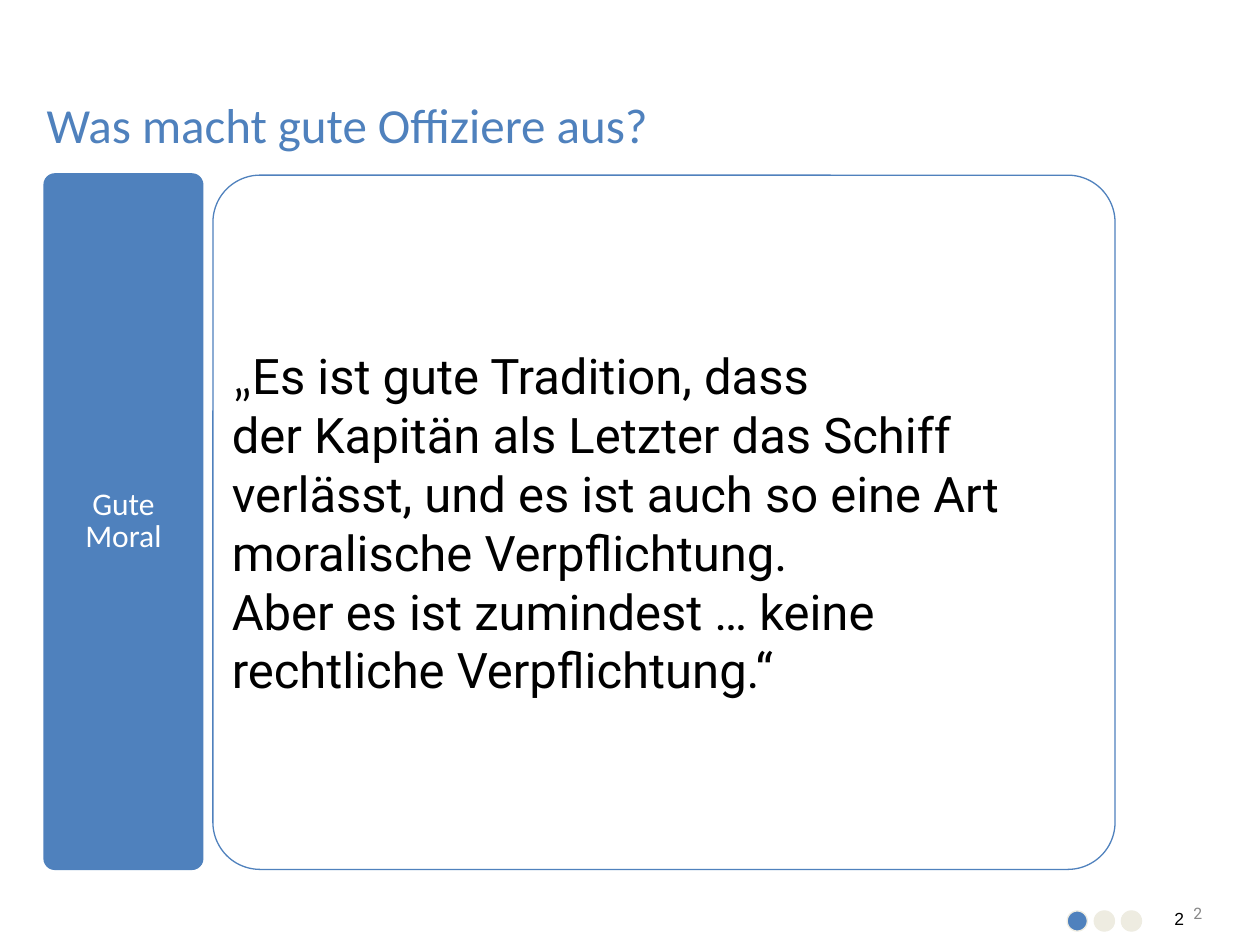
from pptx import Presentation
from pptx.util import Inches, Pt
from pptx.dml.color import RGBColor
from pptx.enum.shapes import MSO_SHAPE as SHAPE
from pptx.enum.text import PP_ALIGN as ALIGN, MSO_ANCHOR as ANCHOR

W, H = 10, 7.5
COLORS = {"blue": "4F81BD", "sand": "EEECE1", "white": "FFFFFF",
          "black": "000000", "grey": "878787"}
TITLE = {"name": "Calibri", "size": Pt(28)}
LABEL = {"name": "Calibri", "size": Pt(18)}
QUOTE = {"name": "Roboto", "size": Pt(28)}
LAYOUT_NUMBER = {"name": "Roboto", "size": Pt(9)}
NUMBER = {"name": "Arial", "size": Pt(10)}
QUOTE_TEXT = [
    [("„", TITLE), ("Es ist gute Tradition, dass", QUOTE)],
    [("der Kapitän als Letzter das Schiff verlässt, und es ist auch so eine Art "
      "moralische Verpflichtung.", QUOTE)],
    [("Aber es ist zumindest … keine rechtliche Verpflichtung.“", QUOTE)],
]


def rgb(name):
    """Return the named colour."""
    return RGBColor.from_string(COLORS[name])


def box(x, y, w, h):
    """Turn shares of the slide into lengths."""
    return Inches(x * W), Inches(y * H), Inches(w * W), Inches(h * H)


def write(tf, paragraphs, color, para=None, inset=None, **frame):
    """Fill a text frame with paragraphs of formatted runs."""
    frame = {"word_wrap": True, **frame}
    if inset is not None:
        sides = ("left", "top", "right", "bottom")
        frame.update({f"margin_{side}": Inches(inset) for side in sides})
    for key, value in frame.items():
        setattr(tf, key, value)
    for i, runs in enumerate(paragraphs):
        p = tf.paragraphs[0] if i == 0 else tf.add_paragraph()
        for key, value in (para or {}).items():
            setattr(p, key, value)
        for text, font in runs:
            r = p.add_run()
            r.text = text
            for key, value in font.items():
                setattr(r.font, key, value)
            r.font.color.rgb = rgb(color)


def add_text(s, place, text, font, color, **options):
    """Add a text box with one line of text."""
    sp = s.shapes.add_textbox(*box(*place))
    write(sp.text_frame, [[(text, font)]], color, **options)


def add_shape(shapes, kind, place, fill, line):
    """Add a preset shape with a thin outline."""
    sp = shapes.add_shape(kind, *box(*place))
    sp.shadow.inherit = False
    if fill:
        sp.fill.solid()
        sp.fill.fore_color.rgb = rgb(fill)
    else:
        sp.fill.background()
    sp.line.color.rgb = rgb(line)
    sp.line.width = Pt(0.75)
    return sp


def add_panel(s, place, fill, paragraphs, color, para):
    """Add a rounded panel with vertically centred text."""
    sp = add_shape(s.shapes, SHAPE.ROUNDED_RECTANGLE, place, fill, "blue")
    sp.adjustments[0] = 0.068
    write(sp.text_frame, paragraphs, color, para, 0.04,
          vertical_anchor=ANCHOR.MIDDLE)


def add_progress(s, x, y, step, size, fills):
    """Add a group of evenly spaced progress dots."""
    group = s.shapes.add_group_shape()
    for i, fill in enumerate(fills):
        place = (x + i * step, y, size / W, size / H)
        add_shape(group.shapes, SHAPE.OVAL, place, fill, "sand")


def main():
    """Build the slide and save it."""
    prs = Presentation()
    prs.slide_width, prs.slide_height = Inches(W), Inches(H)
    s = prs.slides.add_slide(prs.slide_layouts[6])
    add_text(s, (9.19 / W, 7.12 / H, 0.45 / W, 0.25 / H), "2", LAYOUT_NUMBER,
             "grey", para={"alignment": ALIGN.RIGHT}, word_wrap=False)
    add_text(s, (9.25 / W, 7.16 / H, 0.17 / W, 0.16 / H), "2", NUMBER, "black")
    add_text(s, (0.37 / W, 0.55 / H, 0.87, 0.67 / H),
             "Was macht gute Offiziere aus?", TITLE, "blue",
             para={"line_spacing": 0.85}, inset=0, vertical_anchor=ANCHOR.BOTTOM)
    add_progress(s, 8.47 / W, 7.23 / H, 0.215 / W, 0.16, ["blue", "sand", "sand"])
    add_panel(s, (0.35 / W, 1.38 / H, 1.26 / W, 5.52 / H), "blue",
              [[("Gute Moral", LABEL)]], "white",
              {"alignment": ALIGN.CENTER, "line_spacing": 0.85})
    add_panel(s, (1.69 / W, 1.39 / H, 7.16 / W, 5.51 / H), None,
              QUOTE_TEXT, "black", {"alignment": ALIGN.LEFT})
    prs.save("out.pptx")


if __name__ == "__main__":
    main()
